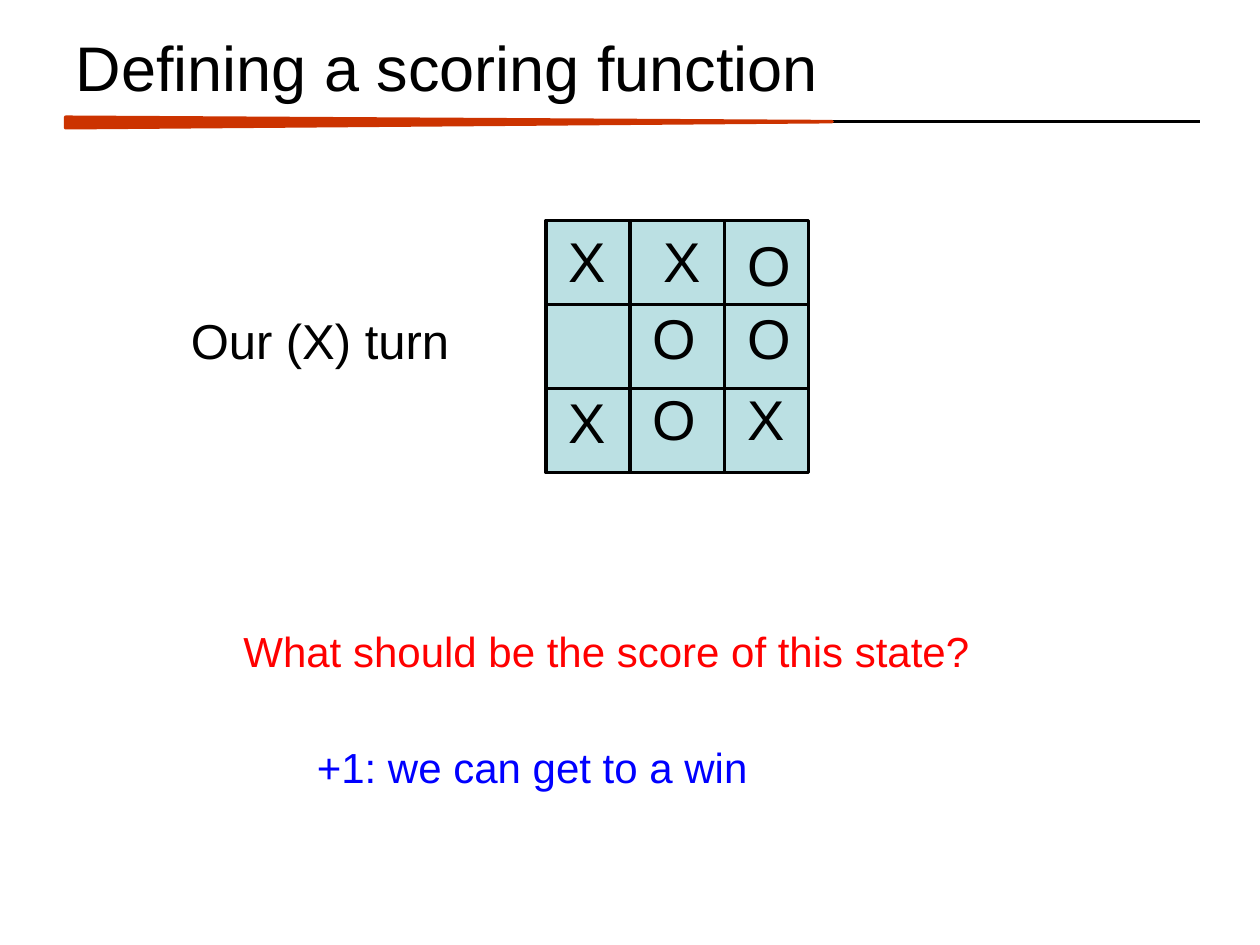
from pptx import Presentation
from pptx.dml.color import RGBColor
from pptx.enum.shapes import MSO_CONNECTOR, MSO_SHAPE
from pptx.enum.text import MSO_ANCHOR, PP_ALIGN
from pptx.oxml.ns import qn
from pptx.util import Pt
from lxml import etree

STRAIGHT = MSO_CONNECTOR.STRAIGHT
RECTANGLE = MSO_SHAPE.RECTANGLE
TRIANGLE = MSO_SHAPE.ISOSCELES_TRIANGLE
LEFT = PP_ALIGN.LEFT
MIDDLE = MSO_ANCHOR.MIDDLE
TITLE_ONLY = 5

BLACK, RED, BLUE = "000000", "FF0000", "0000FF"
ACCENT, BOARD_FILL = "CC3300", "BBE0E3"

# Marks on the board: text, left, top
MARKS = [
    ("X", 318, 126), ("X", 372, 126), ("O", 420, 128),
    ("O", 366, 170), ("O", 420, 170),
    ("X", 318, 218), ("O", 366, 216), ("X", 420, 216),
]

# Captions: text, left, top, width, height, size, colour
CAPTIONS = [
    ("Our (X) turn", 102, 174, 163.5, 41, 28, BLACK),
    ("What should be the score of this state?", 132, 354, 433.5, 36, 24, RED),
    ("+1: we can get to a win", 174, 420, 263, 36, 24, BLUE),
]


def colour(value):
    return RGBColor.from_string(value)


def write(frame, text, size, font_colour):
    para = frame.paragraphs[0]
    para.alignment = LEFT
    span = para.add_run()
    span.text = text
    formats = {"name": "Arial", "size": Pt(size), "bold": False}
    for name, value in formats.items():
        setattr(span.font, name, value)
    span.font.color.rgb = colour(font_colour)


def set_line(item, line_colour):
    item.line.color.rgb = colour(line_colour)
    item.line.width = Pt(2)


def add_title(page, text):
    title = page.shapes.title
    place = {"left": 36, "top": 12, "width": 648, "height": 52}
    for name, value in place.items():
        setattr(title, name, Pt(value))
    title.text_frame.vertical_anchor = MIDDLE
    write(title.text_frame, text, 36, BLACK)


def add_text(page, text, left, top, width, height, size, font_colour, wrap=False):
    box = page.shapes.add_textbox(Pt(left), Pt(top), Pt(width), Pt(height))
    box.text_frame.word_wrap = wrap
    write(box.text_frame, text, size, font_colour)


def add_shape(page, kind, left, top, width, height, fill, line):
    shape = page.shapes.add_shape(kind, Pt(left), Pt(top), Pt(width), Pt(height))
    shape.shadow.inherit = False
    shape.fill.solid()
    shape.fill.fore_color.rgb = colour(fill)
    set_line(shape, line)
    return shape


def add_line(page, x1, y1, x2, y2):
    line = page.shapes.add_connector(STRAIGHT, Pt(x1), Pt(y1), Pt(x2), Pt(y2))
    set_line(line, BLACK)
    etree.SubElement(line._element.spPr, qn("a:effectLst"))


def add_title_rule(page):
    add_line(page, 37.5, 69.4, 685.5, 69.4)
    wedge = add_shape(page, TRIANGLE, 253.5, -149, 6, 438, ACCENT, ACCENT)
    wedge.rotation = 90
    wedge.adjustments[0] = 0.42


def add_board(page):
    left, top, width, height = 312, 126, 150, 144
    add_shape(page, RECTANGLE, left, top, width, height, BOARD_FILL, BLACK)
    for x in (360, 414):
        add_line(page, x, top, x, top + height)
    for row in (1, 2):
        y = top + row * height / 3
        add_line(page, left + width, y, left, y)
    for text, x, y in MARKS:
        add_text(page, text, x, y, 48, 46, 32, BLACK, wrap=True)


def main():
    deck = Presentation()
    deck.slide_width, deck.slide_height = Pt(720), Pt(540)
    page = deck.slides.add_slide(deck.slide_layouts[TITLE_ONLY])

    # Heading
    add_title_rule(page)
    add_title(page, "Defining a scoring function")

    # Game state
    add_board(page)

    # Turn, question and answer
    for caption in CAPTIONS:
        add_text(page, *caption)

    deck.save("out.pptx")


if __name__ == "__main__":
    main()
